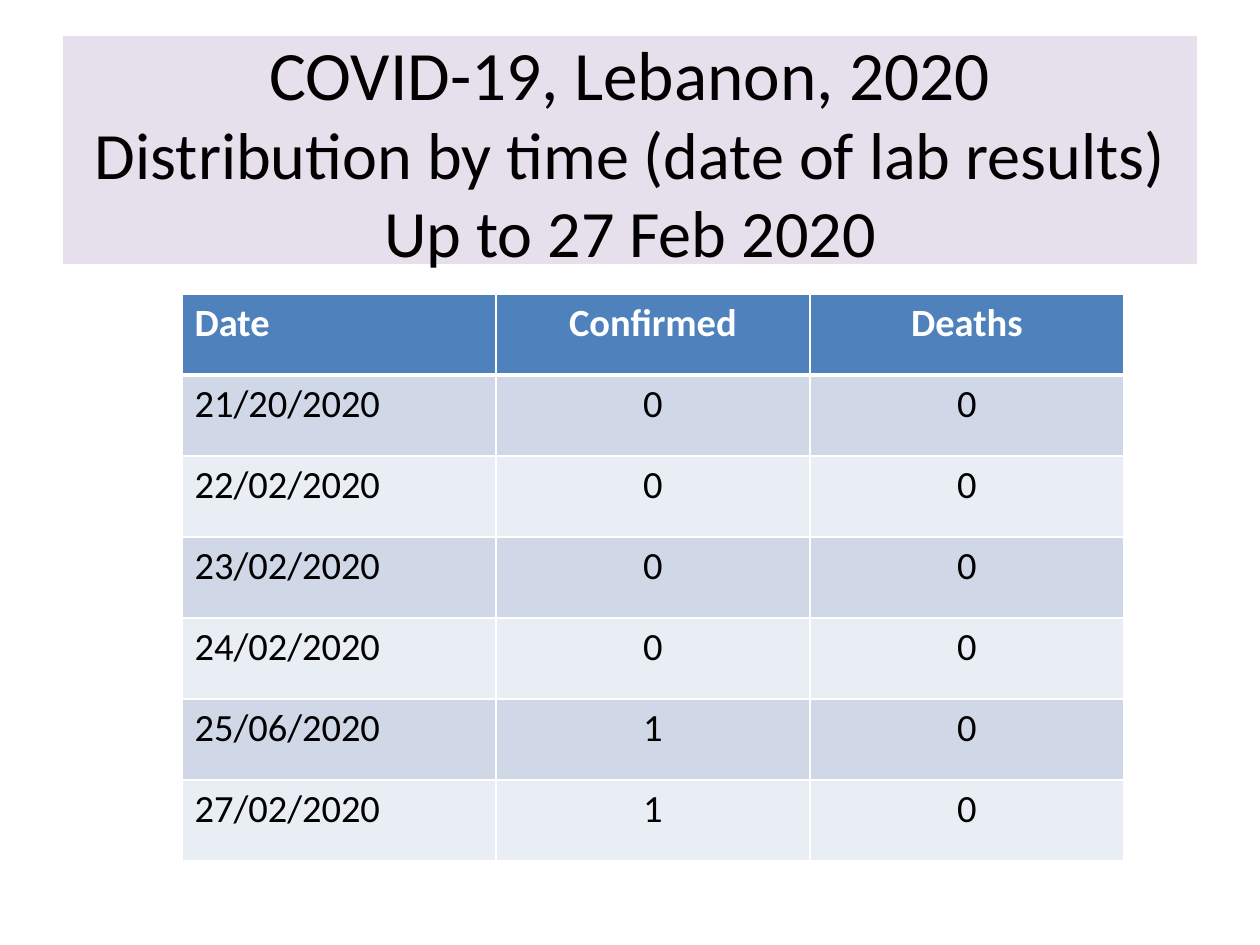
from pptx import Presentation
from pptx.dml.color import RGBColor as RGB
from pptx.enum.text import MSO_ANCHOR as Anchor, MSO_AUTO_SIZE as Fit, PP_ALIGN as Align
from pptx.oxml.xmlchemy import OxmlElement as Node
from pptx.util import Emu, Pt

# Content
TITLE = [
    ("COVID-19, Lebanon, 2020", 39.6),
    ("Distribution by time (date of lab results)", 37.8),
    ("Up to 27 Feb 2020", 37.8),
]
ROWS = [
    ("Date", "Confirmed", "Deaths"),
    ("21/20/2020", "0", "0"),
    ("22/02/2020", "0", "0"),
    ("23/02/2020", "0", "0"),
    ("24/02/2020", "0", "0"),
    ("25/06/2020", "1", "0"),
    ("27/02/2020", "1", "0"),
]
HEX = {"band": "E6E0EC", "head": "4F81BD", "odd": "D0D8E8",
       "even": "E9EDF4", "ink": "000000", "white": "FFFFFF"}
FONT = "Calibri"
COL_W, ROW_H = 314, 81


def px(n):
    return Emu(n * 914400 // 126)


def color(name):
    return RGB.from_string(HEX[name])


def paint(item, name):
    item.fill.solid()
    item.fill.fore_color.rgb = color(name)


def write(par, text, size=22, ink="ink", bold=False, align=Align.LEFT):
    par.alignment = align
    run = par.add_run()
    run.text = text
    font = run.font
    font.name, font.size, font.bold = FONT, Pt(size), bold
    font.color.rgb = color(ink)


def border(cell, **widths):
    """Add white borders; lines go before the fill in the cell properties."""
    props = cell._tc.get_or_add_tcPr()
    for i, (side, width) in enumerate(widths.items()):
        line = Node(f"a:ln{side}")
        line.set("w", str(Pt(width)))
        fill = Node("a:solidFill")
        tone = Node("a:srgbClr")
        tone.set("val", HEX["white"])
        fill.append(tone)
        line.append(fill)
        props.insert(i, line)


deck = Presentation()
deck.slide_width, deck.slide_height = px(1260), px(945)
slide = deck.slides.add_slide(deck.slide_layouts[5])

# Title band
title = slide.shapes.title
title.left, title.top, title.width, title.height = map(px, (63, 36, 1134, 228))
paint(title, "band")
frame = title.text_frame
frame.auto_size = Fit.NONE
frame.word_wrap = True
frame.vertical_anchor = Anchor.MIDDLE
frame.margin_top = px(15)
par = frame.paragraphs[0]
par.line_spacing = 0.98
for i, (text, size) in enumerate(TITLE):
    if i:
        par.add_line_break()
    write(par, text, size=size, align=Align.CENTER)

# Table of daily counts
cols = len(ROWS[0])
table = slide.shapes.add_table(len(ROWS), cols, px(182), px(294),
                               px(COL_W * cols), px(ROW_H * len(ROWS))).table
for col in table.columns:
    col.width = px(COL_W)
for r, row in enumerate(ROWS):
    table.rows[r].height = px(ROW_H)
    head = r == 0
    for c, text in enumerate(row):
        cell = table.cell(r, c)
        paint(cell, "head" if head else "odd" if r % 2 else "even")
        border(cell, L=1, R=1, T=3 if r == 1 else 1, B=3 if head else 1)
        write(cell.text_frame.paragraphs[0], text, bold=head,
              ink="white" if head else "ink",
              align=Align.CENTER if c else Align.LEFT)

deck.save("out.pptx")
